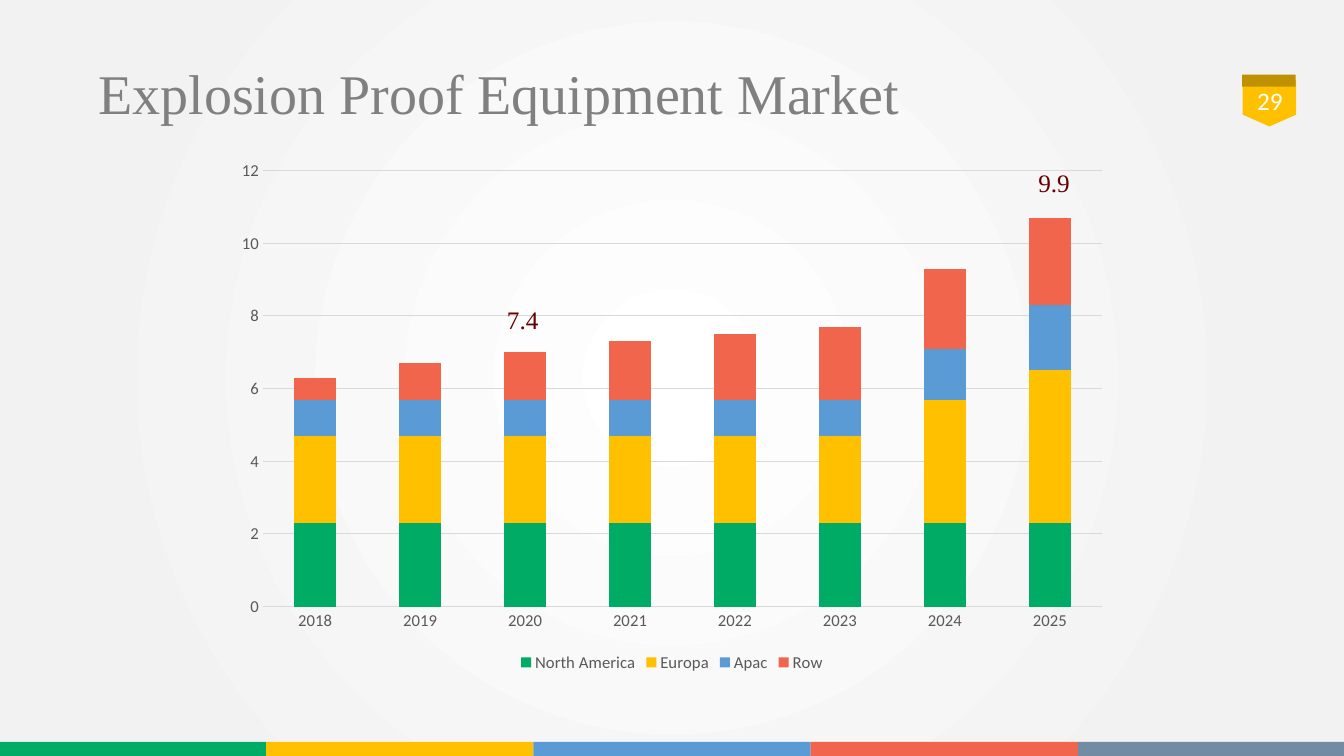
"""Build the Explosion Proof Equipment Market slide with a stacked column chart."""
from dataclasses import dataclass

from lxml import etree
from pptx import Presentation
from pptx.chart.data import CategoryChartData
from pptx.dml.color import RGBColor
from pptx.enum.chart import XL_CHART_TYPE, XL_LEGEND_POSITION, XL_TICK_MARK
from pptx.enum.shapes import MSO_SHAPE
from pptx.enum.text import MSO_ANCHOR, PP_ALIGN
from pptx.oxml import parse_xml
from pptx.oxml.ns import qn
from pptx.util import Inches, Pt

RECTANGLE, PENTAGON = MSO_SHAPE.RECTANGLE, MSO_SHAPE.PENTAGON
STACKED = XL_CHART_TYPE.COLUMN_STACKED
BOTTOM = XL_LEGEND_POSITION.BOTTOM
NO_TICK = XL_TICK_MARK.NONE
LEFT, CENTER = PP_ALIGN.LEFT, PP_ALIGN.CENTER
TOP, MIDDLE = MSO_ANCHOR.TOP, MSO_ANCHOR.MIDDLE
SERIF, SANS = "Times New Roman", "Calibri"
GREEN, YELLOW, BLUE, RED, SLATE = "00AC65", "FFC000", "5B9BD5", "F1654C", "748CA3"
GOLD, GRAY, AXIS_TEXT, GRID, MAROON = "BF9000", "808080", "595959", "D9D9D9", "640000"
SLIDE_WIDTH, SLIDE_HEIGHT = 13.33, 7.5
STRIPE_HEIGHT = 0.14
YEARS = [str(year) for year in range(2018, 2026)]


@dataclass(frozen=True)
class Region:
    name: str
    color: str
    values: tuple


@dataclass(frozen=True)
class Stripe:
    left: float
    color: str


@dataclass(frozen=True)
class Total:
    text: str
    left: float
    top: float


REGIONS = (
    Region("North America", GREEN, (2.3,) * 8),
    Region("Europa", YELLOW, (2.4,) * 6 + (3.4, 4.2)),
    Region("Apac", BLUE, (1,) * 6 + (1.4, 1.8)),
    Region("Row", RED, (0.6, 1, 1.3, 1.6, 1.8, 2, 2.2, 2.4)),
)
STRIPES = (Stripe(0, GREEN), Stripe(2.64, YELLOW), Stripe(5.29, BLUE),
           Stripe(8.04, RED), Stripe(10.69, SLATE))
TOTALS = (Total("7.4", 4.93, 2.97), Total("9.9", 10.2, 1.61))


def rgb(value: str) -> RGBColor:
    """Turn a hex string into a colour."""
    return RGBColor.from_string(value)


def paint_background(page) -> None:
    """Fill the page with a circular gradient from white to light gray."""
    page.background.fill.gradient()
    gradient = next(page.element.iter(qn("a:gradFill")))
    namespace = "http://schemas.openxmlformats.org/drawingml/2006/main"
    for child in list(gradient):
        gradient.remove(child)
    stops = etree.SubElement(gradient, qn("a:gsLst"))
    for position, color in ((0, "FFFFFF"), (81, "F2F2F2"), (100, "F2F2F2")):
        stops.append(parse_xml(
            f'<a:gs xmlns:a="{namespace}" pos="{position * 1000}">'
            f'<a:srgbClr val="{color}"/></a:gs>'))
    gradient.append(parse_xml(
        f'<a:path xmlns:a="{namespace}" path="circle">'
        '<a:fillToRect l="50000" t="50000" r="50000" b="50000"/></a:path>'))


def add_block(page, left: float, top: float, width: float, height: float,
              color: str, kind=RECTANGLE):
    """Add a flat shape without outline or shadow."""
    block = page.shapes.add_shape(
        kind, Inches(left), Inches(top), Inches(width), Inches(height))
    block.shadow.inherit = False
    block.fill.solid()
    block.fill.fore_color.rgb = rgb(color)
    block.line.fill.background()
    return block


def add_text(page, text: str, *, left: float, top: float, width: float,
             height: float, size: float, color: str, font: str = SERIF,
             align=LEFT, anchor=TOP, spacing: float = 1.0) -> None:
    """Add a text box with a single formatted paragraph."""
    box = page.shapes.add_textbox(
        Inches(left), Inches(top), Inches(width), Inches(height))
    frame = box.text_frame
    frame.word_wrap = True
    frame.vertical_anchor = anchor
    para = frame.paragraphs[0]
    para.alignment = align
    para.line_spacing = spacing
    span = para.add_run()
    span.text = text
    style_font(span.font, size, color, font)


def style_font(font, size: float, color: str, name: str = SANS) -> None:
    """Set size, colour and typeface of a font."""
    font.size = Pt(size)
    font.name = name
    font.color.rgb = rgb(color)


def style_line(line) -> None:
    """Give a chart line the thin light gray look."""
    line.color.rgb = rgb(GRID)
    line.width = Pt(0.75)


def add_market_chart(page) -> None:
    """Add the stacked columns by region and year."""
    data = CategoryChartData()
    data.categories = YEARS
    for region in REGIONS:
        data.add_series(region.name, region.values)
    chart = page.shapes.add_chart(
        STACKED, Inches(2.22), Inches(1.49), Inches(8.89), Inches(5.22), data).chart
    style_font(chart.font, 11.9, AXIS_TEXT)
    chart.has_title = False
    chart.has_legend = True
    chart.legend.position = BOTTOM
    chart.legend.include_in_layout = False
    style_font(chart.legend.font, 11.9, AXIS_TEXT)

    plot = chart.plots[0]
    plot.gap_width, plot.overlap = 150, 100
    plot.vary_by_categories = False
    for series, region in zip(plot.series, REGIONS):
        series.format.fill.solid()
        series.format.fill.fore_color.rgb = rgb(region.color)

    for axis in (chart.category_axis, chart.value_axis):
        axis.major_tick_mark = axis.minor_tick_mark = NO_TICK
        style_font(axis.tick_labels.font, 11.9, AXIS_TEXT)
    style_line(chart.category_axis.format.line)
    values = chart.value_axis
    values.minimum_scale, values.maximum_scale, values.major_unit = 0, 12, 2
    values.format.line.fill.background()
    values.has_major_gridlines = True
    style_line(values.major_gridlines.format.line)


def main() -> None:
    """Assemble the slide and save it."""
    deck = Presentation()
    deck.slide_width, deck.slide_height = Inches(SLIDE_WIDTH), Inches(SLIDE_HEIGHT)
    page = deck.slides.add_slide(deck.slide_layouts[6])
    paint_background(page)

    badge = add_block(page, 12.36, 0.76, 0.46, 0.53, YELLOW, PENTAGON)
    badge.rotation = 90
    badge.adjustments[0] = 0.255
    add_block(page, 12.32, 0.74, 0.53, 0.12, GOLD)

    ends = [stripe.left for stripe in STRIPES[1:]] + [SLIDE_WIDTH]
    for stripe, end in zip(STRIPES, ends):
        add_block(page, stripe.left, SLIDE_HEIGHT - STRIPE_HEIGHT,
                  end - stripe.left, STRIPE_HEIGHT, stripe.color)

    add_text(page, "Explosion Proof Equipment Market", left=0.88, top=0.56,
             width=11.7, height=0.8, size=40, color=GRAY, anchor=MIDDLE, spacing=0.9)
    add_text(page, "29", left=12.29, top=0.74, width=0.61, height=0.52, size=18,
             color="FFFFFF", font=SANS, align=CENTER, anchor=MIDDLE)
    add_market_chart(page)
    for total in TOTALS:
        add_text(page, total.text, left=total.left, top=total.top, width=0.63,
                 height=0.4, size=18, color=MAROON)
    deck.save("out.pptx")


if __name__ == "__main__":
    main()
